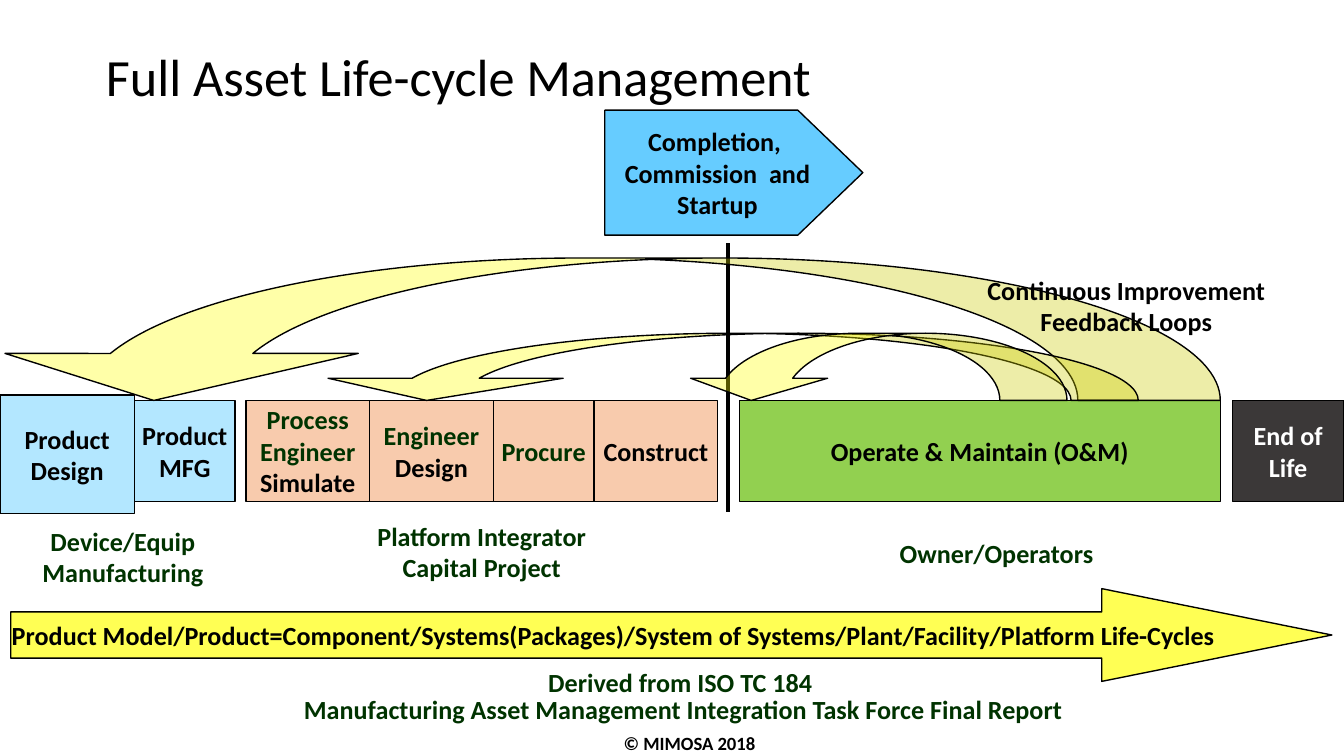
"""Build the asset life-cycle management slide."""
import lxml.etree
import pptx
import pptx.dml.color
import pptx.enum.shapes
import pptx.enum.text
import pptx.oxml.ns
import pptx.util

Inches = pptx.util.Inches
Pt = pptx.util.Pt
SHAPES = pptx.enum.shapes.MSO_SHAPE
ALIGN = pptx.enum.text.PP_ALIGN
ANCHOR = pptx.enum.text.MSO_ANCHOR
qn = pptx.oxml.ns.qn

COLORS = {
    "black": "000000", "white": "FFFFFF", "forest": "003300",
    "sky": "B3E7FF", "blue": "66CCFF", "peach": "F8CBAD",
    "green": "92D050", "charcoal": "3B3838", "yellow": "FFFF00",
}

deck = pptx.Presentation()
deck.slide_width = Inches(10)
deck.slide_height = Inches(10) * 9 // 16
page = deck.slides.add_slide(deck.slide_layouts[6])


def write(box, lines, size=14, bold=True, frame_format=None, para_format=None):
    """Fill a shape with (text, colour) lines."""
    frame = box.text_frame
    frame.word_wrap = True
    for name, value in (frame_format or {}).items():
        setattr(frame, name, value)
    for index, (text, color) in enumerate(lines):
        para = frame.add_paragraph() if index else frame.paragraphs[0]
        for name, value in {"alignment": ALIGN.CENTER, **(para_format or {})}.items():
            setattr(para, name, value)
        if index and para.line_spacing:
            para.space_before = Pt(2)
        span = para.add_run()
        span.text = text
        for name, value in {"name": "Calibri", "size": Pt(size), "bold": bold}.items():
            setattr(span.font, name, value)
        span.font.color.rgb = pptx.dml.color.RGBColor.from_string(COLORS[color])


def draw(kind, place, color, adjustments=(), opacity=None):
    """Add an outlined preset shape."""
    shape = page.shapes.add_shape(kind, *map(Inches, place))
    shape.shadow.inherit = False
    shape.fill.solid()
    shape.fill.fore_color.rgb = pptx.dml.color.RGBColor.from_string(COLORS[color])
    shape.line.color.rgb = pptx.dml.color.RGBColor.from_string(COLORS["black"])
    shape.line.width = Pt(0.75)
    for index, value in enumerate(adjustments):
        shape.adjustments[index] = value
    if opacity:
        tint = shape.fill._xPr.find(qn("a:solidFill"))[0]
        lxml.etree.SubElement(tint, qn("a:alpha"), val=str(opacity * 1000))
    return shape


divider = page.shapes.add_connector(
    pptx.enum.shapes.MSO_CONNECTOR.STRAIGHT,
    Inches(5.42), Inches(1.81), Inches(5.42), Inches(3.81))
divider.line.color.rgb = pptx.dml.color.RGBColor.from_string(COLORS["black"])
divider.line.width = Pt(2.25)
lxml.etree.SubElement(divider._element.spPr, qn("a:effectLst"))

middle = {"vertical_anchor": ANCHOR.MIDDLE}
life_cycle = draw(SHAPES.RIGHT_ARROW, (0.08, 4.38, 9.83, 0.69), "yellow", (0.5, 2.48), 67)
write(life_cycle, [(
    "Product Model/Product=Component/Systems(Packages)/System of Systems"
    "/Plant/Facility/Platform Life-Cycles", "black")],
    frame_format={**middle, "word_wrap": False})

startup = draw(SHAPES.PENTAGON, (4.5, 0.82, 1.92, 0.93), "blue", (0.52,))
write(startup, [("Completion, ", "black"), ("Commission  and Startup", "black")],
      frame_format=middle)

stages = [
    (0, 1, "sky", [("Product", "black"), ("Design", "black")]),
    (1, 0.75, "sky", [("Product", "black"), ("MFG", "black")]),
    (1.83, 0.92, "peach",
     [("Process", "forest"), ("Engineer", "forest"), ("Simulate", "black")]),
    (2.75, 0.92, "peach", [("Engineer", "forest"), ("Design", "black")]),
    (3.67, 0.75, "peach", [("Procure", "forest")]),
    (4.42, 0.92, "peach", [("Construct", "black")]),
    (5.5, 3.58, "green", [("Operate & Maintain (O&M)", "black")]),
    (9.17, 0.83, "charcoal", [("End of Life", "white")]),
]
for left, width, color, lines in stages:
    top, height = (2.98, 0.75) if left else (2.94, 0.88)
    stage = draw(SHAPES.RECTANGLE, (left, top, width, height), color)
    write(stage, lines, frame_format={**middle, "margin_left": 0, "margin_right": 0})

feedback_loops = [
    (-0.17, 1.92, 9.25, 1.06, 1.24),
    (2.3, 2.48, 6.17, 0.5, 1.75),
    (5.08, 2.48, 2.86, 0.5, 1.02),
]
for *place, thickness in feedback_loops:
    loop = draw(SHAPES.CURVED_DOWN_ARROW, place, "yellow",
                (thickness, 2 * thickness, 0.33), 34)
    loop._element.spPr.find(qn("a:xfrm")).set("flipH", "1")

labels = [
    ((6.92, 1.99, 2.92, 0.57), ["Continuous Improvement Feedback Loops"], "black", {}),
    ((0, 3.86, 1.83, 0.57), ["Device/Equip", "Manufacturing"], "forest", {}),
    ((2.42, 3.82, 2.33, 0.57), ["Platform Integrator", "Capital Project"], "forest", {}),
    ((6.25, 3.95, 2.33, 0.34), ["Owner/Operators"], "forest", {}),
    ((1.42, 4.98, 7.33, 0.47),
     ["Derived from ISO TC 184 ",
      "Manufacturing Asset Management Integration Task Force Final Report"],
     "forest", {"para_format": {"line_spacing": Pt(12)}}),
    ((4.17, 5.4, 1.92, 0.27), ["© MIMOSA 2018"], "black", {"size": 10}),
    ((0.69, 0.3, 8.62, 0.59), ["Full Asset Life-cycle Management"], "black",
     {"size": 28, "bold": False, "frame_format": middle,
      "para_format": {"alignment": ALIGN.LEFT, "line_spacing": 0.9}}),
]
for place, lines, color, style in labels:
    label = page.shapes.add_textbox(*map(Inches, place))
    write(label, [(text, color) for text in lines], **style)

deck.save("out.pptx")
